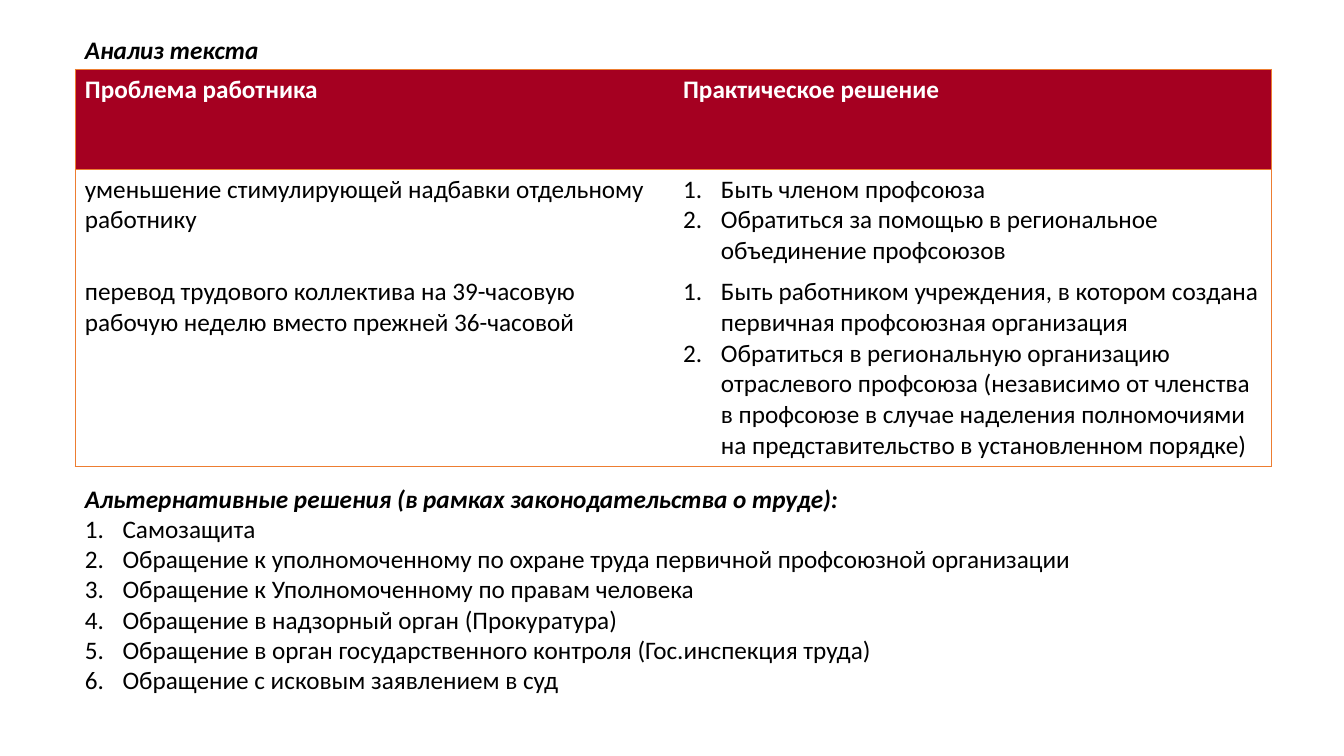
from dataclasses import dataclass

from lxml.etree import SubElement
from pptx import Presentation
from pptx.dml.color import RGBColor
from pptx.enum.text import MSO_AUTO_SIZE
from pptx.oxml.ns import qn
from pptx.util import Pt


@dataclass(frozen=True)
class Theme:
    font: str = "Calibri"
    size: float = 18
    text: str = "000000"
    header_text: str = "FFFFFF"
    header_fill: str = "A50021"
    border: str = "ED7D31"
    border_width: float = 0.5
    number_indent: float = 27


class SlideBuilder:
    def __init__(self, slide, theme):
        self.slide = slide
        self.theme = theme

    def format_paragraph(self, paragraph, color, bold=False, italic=False):
        for run in paragraph.runs:
            run.font.name = self.theme.font
            run.font.size = Pt(self.theme.size)
            run.font.color.rgb = RGBColor.from_string(color)
            run.font.bold = bold
            run.font.italic = italic

    def number_paragraph(self, paragraph):
        properties = paragraph._p.get_or_add_pPr()
        indent = Pt(self.theme.number_indent)
        properties.set("marL", str(indent))
        properties.set("indent", str(-indent))
        SubElement(properties, qn("a:buAutoNum"), type="arabicPeriod")

    def text_box(self, left, top, width, height, heading, items=()):
        shape = self.slide.shapes.add_textbox(Pt(left), Pt(top), Pt(width), Pt(height))
        frame = shape.text_frame
        frame.word_wrap = True
        frame.auto_size = MSO_AUTO_SIZE.SHAPE_TO_FIT_TEXT
        frame.text = "\n".join([heading, *items])
        title, *numbered = frame.paragraphs
        self.format_paragraph(title, self.theme.text, bold=True, italic=True)
        for paragraph in numbered:
            self.format_paragraph(paragraph, self.theme.text)
            self.number_paragraph(paragraph)

    def cell_borders(self, cell, visible_sides):
        properties = cell._tc.get_or_add_tcPr()
        for side in "LRTB":
            line = SubElement(properties, qn(f"a:ln{side}"), w=str(Pt(self.theme.border_width)))
            if side in visible_sides:
                fill = SubElement(line, qn("a:solidFill"))
                SubElement(fill, qn("a:srgbClr"), val=self.theme.border)
            else:
                SubElement(line, qn("a:noFill"))

    def fill_cell(self, cell, content, is_header, visible_sides):
        self.cell_borders(cell, visible_sides)
        if is_header:
            cell.fill.solid()
            cell.fill.fore_color.rgb = RGBColor.from_string(self.theme.header_fill)
        else:
            cell.fill.background()
        numbered = isinstance(content, list)
        cell.text_frame.text = "\n".join(content) if numbered else content
        color = self.theme.header_text if is_header else self.theme.text
        for paragraph in cell.text_frame.paragraphs:
            self.format_paragraph(paragraph, color, bold=is_header)
            if numbered:
                self.number_paragraph(paragraph)

    def table(self, left, top, width, height, row_height, rows):
        columns = len(rows[0])
        shape = self.slide.shapes.add_table(
            len(rows), columns, Pt(left), Pt(top), Pt(width), Pt(height)
        )
        table = shape.table
        table.first_row = False
        table.horz_banding = False
        for row_index, contents in enumerate(rows):
            table.rows[row_index].height = Pt(row_height)
            for column_index, content in enumerate(contents):
                sides = "T" if row_index < 2 else ""
                sides += "B" if row_index > 0 else ""
                sides += "L" if column_index == 0 else ""
                sides += "R" if column_index == columns - 1 else ""
                cell = table.cell(row_index, column_index)
                self.fill_cell(cell, content, row_index == 0, sides)
        shape.height = Pt(height)


PROBLEMS_AND_SOLUTIONS = [
    ["Проблема работника", "Практическое решение"],
    [
        "уменьшение стимулирующей надбавки отдельному работнику",
        [
            "Быть членом профсоюза",
            "Обратиться за помощью в региональное объединение профсоюзов",
        ],
    ],
    [
        "перевод трудового коллектива на 39-часовую рабочую неделю вместо прежней 36-часовой",
        [
            "Быть работником учреждения, в котором создана первичная профсоюзная организация",
            "Обратиться в региональную организацию отраслевого профсоюза "
            "(независимо от членства в профсоюзе в случае наделения полномочиями "
            "на представительство в установленном порядке)",
        ],
    ],
]

ALTERNATIVES = [
    "Самозащита",
    "Обращение к уполномоченному по охране труда первичной профсоюзной организации",
    "Обращение к Уполномоченному по правам человека",
    "Обращение в надзорный орган (Прокуратура)",
    "Обращение в орган государственного контроля (Гос.инспекция труда)",
    "Обращение с исковым заявлением в суд",
]


def main():
    presentation = Presentation()
    presentation.slide_width = Pt(960)
    presentation.slide_height = Pt(540)
    slide = presentation.slides.add_slide(presentation.slide_layouts[6])
    builder = SlideBuilder(slide, Theme())
    left = 53.5
    builder.table(left, 49.5, 854.6, 280, 71.3, PROBLEMS_AND_SOLUTIONS)
    builder.text_box(left, 21, 150.5, 29, "Анализ текста")
    builder.text_box(
        left, 341.5, 849.6, 160,
        "Альтернативные решения (в рамках законодательства о труде):", ALTERNATIVES,
    )
    presentation.save("out.pptx")


if __name__ == "__main__":
    main()
